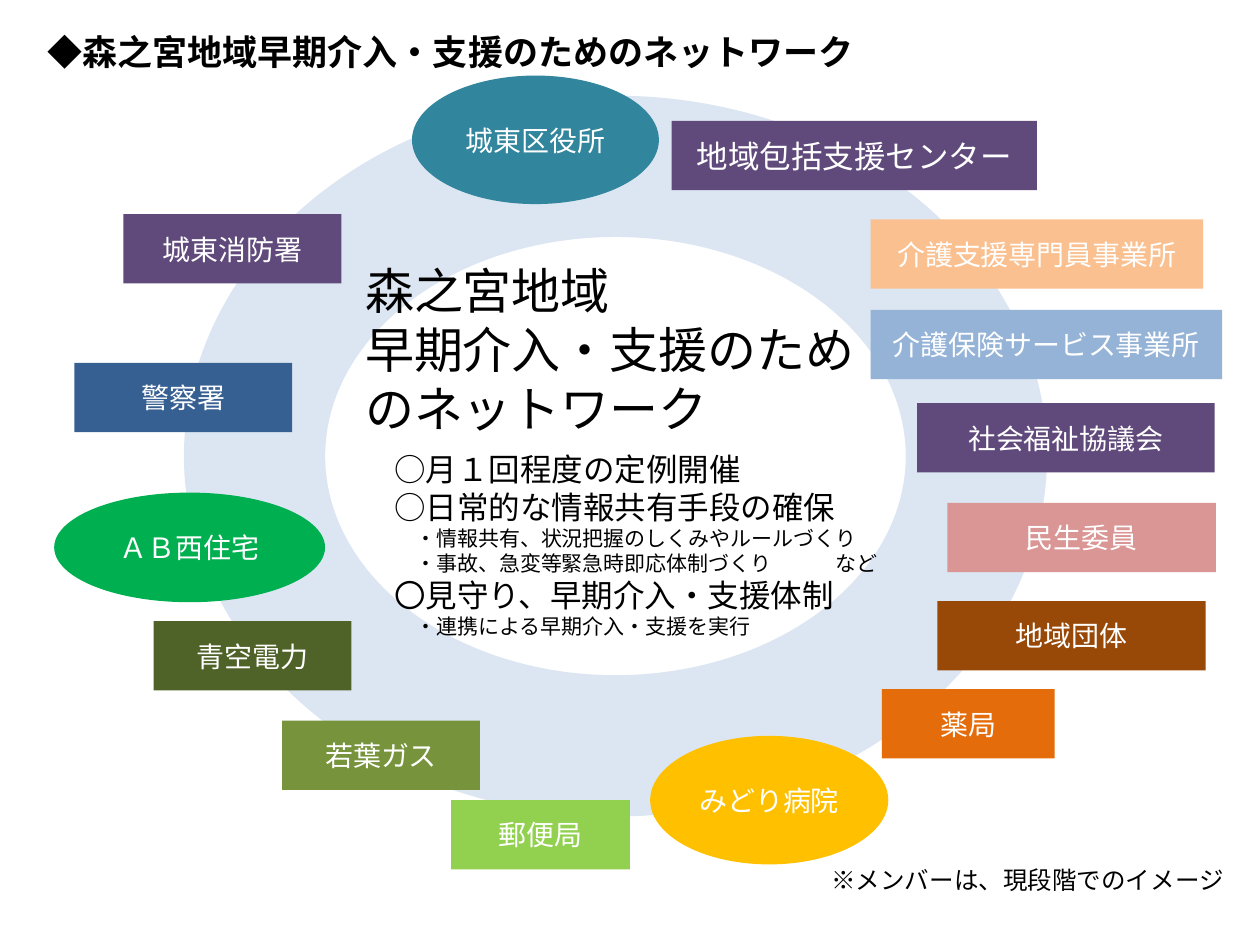
from dataclasses import dataclass

from pptx import Presentation
from pptx import util as u
from pptx.dml.color import RGBColor
from pptx.enum import shapes, text
from pptx.oxml.xmlchemy import OxmlElement

FONT = "Noto Sans CJK JP"
COLS, ROWS = 100, 75  # grid over the slide
CELL = u.Inches(0.1)
LABEL_ROWS = 5.5
COLORS = {
    "black": "000000", "white": "FFFFFF", "ring": "DCE6F2",
    "purple": "604A7B", "peach": "FAC090", "sky": "95B3D7",
    "pink": "D99694", "brown": "984807", "orange": "E46C0A",
    "gold": "FFC000", "lime": "92D050", "olive": "77933C",
    "moss": "4F6228", "green": "00B050", "navy": "376092",
    "teal": "31859C",
}
RECT = shapes.MSO_SHAPE.RECTANGLE
OVAL = shapes.MSO_SHAPE.OVAL


@dataclass
class Member:
    name: str
    color: str
    col: float
    row: float
    cols: float
    rows: float = LABEL_ROWS
    kind: shapes.MSO_SHAPE = RECT
    size: int = 16


@dataclass
class Line:
    words: str
    size: int
    indent: float = 0  # first-line indent, in characters
    tab: float = 0  # tab stop, in characters
    bold: bool = False


MEMBERS = [  # clockwise from the top
    Member("城東区役所", "teal", 32.7, 6, 19.6, 10.2, OVAL),
    Member("地域包括支援センター", "purple", 53.3, 9.6, 29, size=18),
    Member("介護支援専門員事業所", "peach", 69.1, 17.4, 26.4),
    Member("介護保険サービス事業所", "sky", 69.1, 24.6, 27.9),
    Member("社会福祉協議会", "purple", 72.8, 32, 23.6),
    Member("民生委員", "pink", 75.2, 39.9, 21.3),
    Member("地域団体", "brown", 74.4, 47.7, 21.3),
    Member("薬局", "orange", 70, 54.7, 13.7),
    Member("みどり病院", "gold", 51.6, 58.4, 18.9, 10.2, OVAL),
    Member("郵便局", "lime", 35.8, 63.5, 14.2),
    Member("若葉ガス", "olive", 22.4, 57.2, 15.7),
    Member("青空電力", "moss", 12.2, 49.3, 15.7),
    Member("ＡＢ西住宅", "green", 4.3, 39.1, 21.5, 8.7, OVAL),
    Member("警察署", "navy", 5.9, 28.8, 17.3),
    Member("城東消防署", "purple", 9.8, 17, 17.3),
]
TITLE = [Line("◆森之宮地域早期介入・支援のためのネットワーク", 20, 1, bold=True)]
NETWORK = [
    Line("森之宮地域", 28),
    Line("早期介入・支援のためのネットワーク", 28),
]
ACTIVITIES = [
    Line("○月１回程度の定例開催", 18),
    Line("○日常的な情報共有手段の確保", 18),
    Line("・情報共有、状況把握のしくみやルールづくり", 12, 1),
    Line("・事故、急変等緊急時即応体制づくり\tなど", 12, 1, tab=20),
    Line("〇見守り、早期介入・支援体制", 18),
    Line("・連携による早期介入・支援を実行", 12, 1),
]
NOTE = [Line("※メンバーは、現段階でのイメージ", 14)]


def rgb(name: str) -> RGBColor:
    return RGBColor.from_string(COLORS[name])


def place(col: float, row: float, cols: float, rows: float) -> list[int]:
    return [u.Emu(round(n * CELL)) for n in (col, row, cols, rows)]


def add_run(p, words: str, size: int, color: str, bold: bool = False) -> None:
    r = p.add_run()
    r.text = words
    r.font.size = u.Pt(size)
    r.font.bold = bold
    r.font.name = FONT
    r.font.color.rgb = rgb(color)
    ea = OxmlElement("a:ea")
    ea.set("typeface", FONT)
    r.font._element.append(ea)


def add_filled(slide, kind, box: list[int], color: str):
    sp = slide.shapes.add_shape(kind, *box)
    sp.shadow.inherit = False
    sp.fill.solid()
    sp.fill.fore_color.rgb = rgb(color)
    sp.line.fill.background()
    return sp


def add_member(slide, m: Member) -> None:
    sp = add_filled(slide, m.kind, place(m.col, m.row, m.cols, m.rows), m.color)
    tf = sp.text_frame
    tf.word_wrap = True
    tf.vertical_anchor = text.MSO_ANCHOR.MIDDLE
    p = tf.paragraphs[0]
    p.alignment = text.PP_ALIGN.CENTER
    add_run(p, m.name, m.size, "white")


def indent_line(p, line: Line) -> None:
    """Set the first-line indent and the tab stop of a paragraph."""
    pPr = p._p.get_or_add_pPr()
    pPr.set("marL", "0")
    pPr.set("indent", str(u.Pt(line.indent * line.size)))
    if line.tab:
        tabs = OxmlElement("a:tabLst")
        stop = OxmlElement("a:tab")
        stop.set("pos", str(u.Pt(line.tab * line.size)))
        stop.set("algn", "l")
        tabs.append(stop)
        pPr.append(tabs)


def add_lines(slide, box: list[int], lines: list[Line],
              anchor=text.MSO_ANCHOR.TOP) -> None:
    tf = slide.shapes.add_textbox(*box).text_frame
    tf.word_wrap = True
    tf.vertical_anchor = anchor
    for i, line in enumerate(lines):
        p = tf.add_paragraph() if i else tf.paragraphs[0]
        indent_line(p, line)
        add_run(p, line.words, line.size, "black", line.bold)


def main() -> None:
    prs = Presentation()
    prs.slide_width, prs.slide_height = COLS * CELL, ROWS * CELL
    slide = prs.slides.add_slide(prs.slide_layouts[6])

    ring = add_filled(slide, shapes.MSO_SHAPE.DONUT,
                      place(14.6, 7.6, 68.5, 57.2), "ring")
    ring.adjustments[0] = 0.196
    for m in MEMBERS:
        add_member(slide, m)

    add_lines(slide, place(0, 0.9, COLS, 6.3), TITLE, text.MSO_ANCHOR.MIDDLE)
    add_lines(slide, place(28, 20.2, 41.7, 15.1), NETWORK)
    add_lines(slide, place(30.3, 35.2, 42.5, 16.5), ACTIVITIES)
    add_lines(slide, place(65, 68.2, 33.9, 3.4), NOTE)
    prs.save("out.pptx")


if __name__ == "__main__":
    main()
